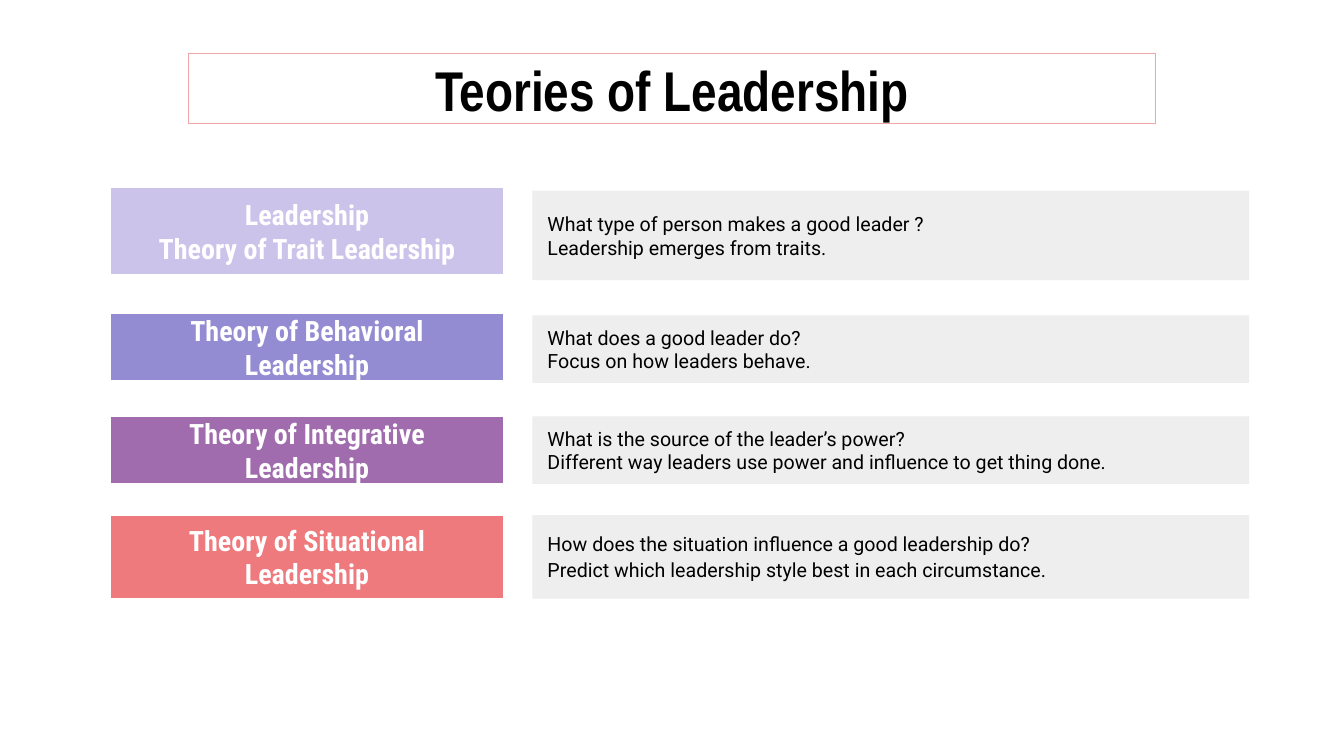
from dataclasses import dataclass

from pptx import Presentation
from pptx.dml.color import RGBColor
from pptx.enum.shapes import MSO_SHAPE
from pptx.enum.text import MSO_ANCHOR, MSO_AUTO_SIZE, PP_ALIGN
from pptx.util import Inches, Pt

RECTANGLE = MSO_SHAPE.RECTANGLE
MIDDLE = MSO_ANCHOR.MIDDLE
NO_AUTOFIT = MSO_AUTO_SIZE.NONE
LEFT = PP_ALIGN.LEFT
CENTER = PP_ALIGN.CENTER
TITLE_ONLY = 5


@dataclass(frozen=True)
class TextStyle:
    """Font, size, colour and alignment of one kind of text."""

    font: str
    size: int
    color: str
    bold: bool
    align: int
    side_inset: float


@dataclass(frozen=True)
class Theme:
    """Colours and text styles of the slide."""

    title: TextStyle = TextStyle("Arial Narrow", 40, "000000", True, CENTER, 0.1)
    label: TextStyle = TextStyle("Roboto Condensed", 20, "FFFFFF", True, CENTER, 0.15)
    answer: TextStyle = TextStyle("Roboto", 14, "000000", False, LEFT, 0.15)
    title_line: str = "F0A6A6"
    label_line: str = "FFFFFF"
    answer_fill: str = "EEEEEE"


@dataclass(frozen=True)
class Theory:
    """One row: its label, its explanation and its measures."""

    label: tuple
    answer: tuple
    color: str
    label_top: float
    label_height: float
    answer_top: float
    answer_height: float
    space_after: int = 0


THEME = Theme()
LABEL_LEFT, LABEL_WIDTH = 1.09, 3.91
ANSWER_LEFT, ANSWER_WIDTH = 5.28, 7.11

THEORIES = (
    Theory(
        ("Leadership", "Theory of Trait Leadership"),
        ("What type of person makes a good leader ?", "Leadership emerges from traits."),
        "CCC3EB", 1.86, 0.87, 1.89, 0.89,
    ),
    Theory(
        ("Theory of Behavioral Leadership",),
        ("What does a good leader do?", "Focus on how leaders behave."),
        "948CD3", 3.11, 0.67, 3.13, 0.67,
    ),
    Theory(
        ("Theory of Integrative Leadership",),
        (
            "What is the source of the leader’s power?",
            "Different way leaders use power and influence to get thing done.",
        ),
        "A06CAD", 4.13, 0.67, 4.13, 0.67,
    ),
    Theory(
        ("Theory of Situational Leadership",),
        (
            "How does the situation influence a good leadership do?",
            "Predict which leadership style best in each circumstance.",
        ),
        "EE7A7D", 5.11, 0.83, 5.11, 0.83, 2,
    ),
)


def write_lines(shape, lines, style, space_after=0):
    """Fill a shape with one styled paragraph per line."""
    frame = shape.text_frame
    frame.text = "\n".join(lines)
    frame.word_wrap = True
    frame.auto_size = NO_AUTOFIT
    frame.vertical_anchor = MIDDLE
    frame.margin_left = frame.margin_right = Inches(style.side_inset)
    frame.margin_top = frame.margin_bottom = Inches(0.1)
    for para in frame.paragraphs:
        para.alignment = style.align
        para.space_after = Pt(space_after)
        para.font.name = style.font
        para.font.size = Pt(style.size)
        para.font.bold = style.bold
        para.font.color.rgb = RGBColor.from_string(style.color)


def outline(shape, color, width):
    """Draw a solid border round a shape."""
    shape.line.color.rgb = RGBColor.from_string(color)
    shape.line.width = Pt(width)


def add_title(page, text):
    """Place the framed title."""
    title = page.shapes.title
    title.left, title.top = Inches(1.87), Inches(0.53)
    title.width, title.height = Inches(9.59), Inches(0.7)
    outline(title, THEME.title_line, 0.75)
    write_lines(title, (text,), THEME.title)


def add_panel(page, left, top, width, height, color):
    """Add a filled rectangle without border or shadow."""
    panel = page.shapes.add_shape(
        RECTANGLE, Inches(left), Inches(top), Inches(width), Inches(height)
    )
    panel.shadow.inherit = False
    panel.fill.solid()
    panel.fill.fore_color.rgb = RGBColor.from_string(color)
    panel.line.fill.background()
    return panel


def add_theory(page, theory):
    """Add a coloured label and the explanation beside it."""
    answer = add_panel(
        page, ANSWER_LEFT, theory.answer_top, ANSWER_WIDTH, theory.answer_height,
        THEME.answer_fill,
    )
    write_lines(answer, theory.answer, THEME.answer, theory.space_after)
    label = add_panel(
        page, LABEL_LEFT, theory.label_top, LABEL_WIDTH, theory.label_height,
        theory.color,
    )
    outline(label, THEME.label_line, 1.5)
    write_lines(label, theory.label, THEME.label, theory.space_after)


def main():
    """Build and save the deck."""
    deck = Presentation()
    deck.slide_width, deck.slide_height = Inches(13.33), Inches(7.5)
    page = deck.slides.add_slide(deck.slide_layouts[TITLE_ONLY])
    add_title(page, "Teories of Leadership")
    for theory in THEORIES:
        add_theory(page, theory)
    deck.save("out.pptx")


if __name__ == "__main__":
    main()
